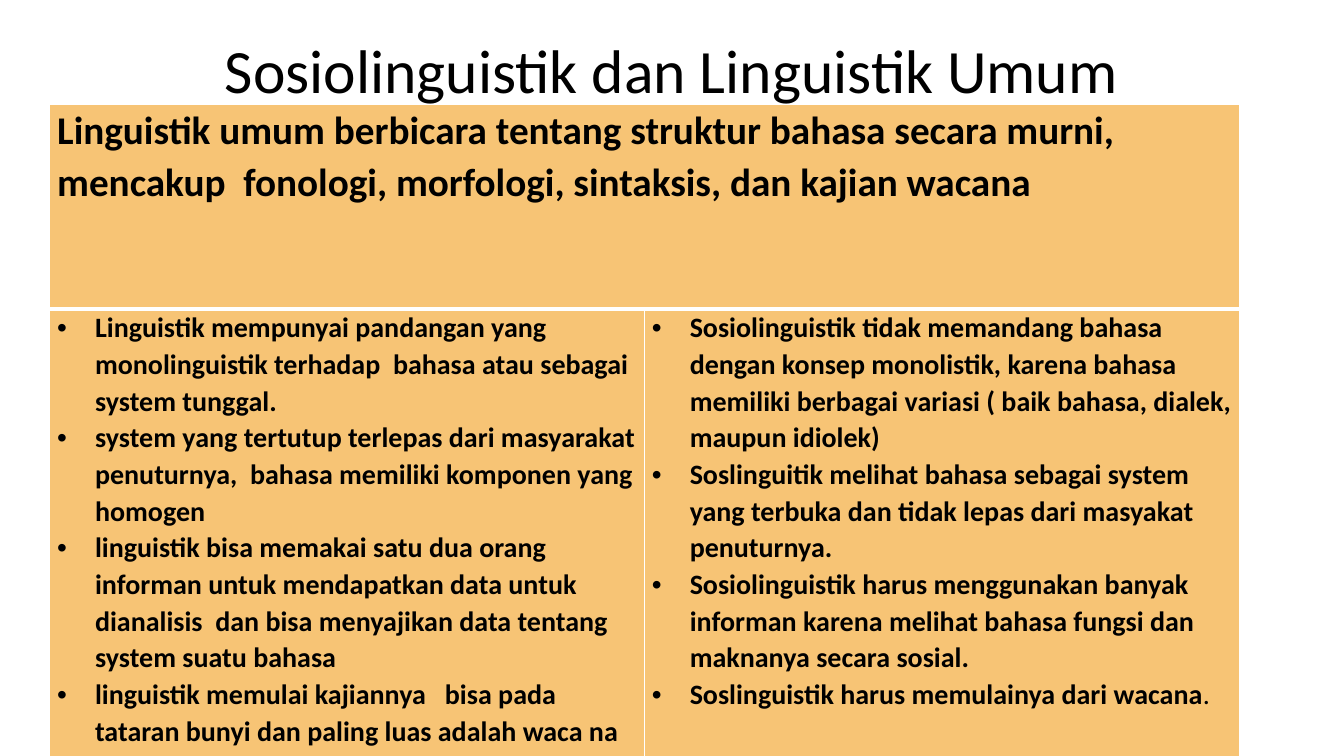
from lxml import etree
from pptx import Presentation
from pptx.dml.color import RGBColor
from pptx.enum import text
from pptx.oxml import ns
from pptx.util import Pt

FONT = "Calibri"
BLACK, WHITE, ORANGE = "000000", "FFFFFF", "F7C475"
INDENT = 27
TITLE = "Sosiolinguistik dan Linguistik Umum"
HEADING = ("Linguistik umum berbicara tentang struktur bahasa secara murni, "
           "mencakup  fonologi, morfologi, sintaksis, dan kajian wacana")
LINGUISTIK = [
    ["Linguistik mempunyai pandangan yang monolinguistik terhadap  bahasa "
     "atau sebagai system tunggal."],
    ["system yang tertutup terlepas dari masyarakat penuturnya,  bahasa "
     "memiliki komponen yang homogen"],
    ["linguistik bisa memakai satu dua orang informan untuk mendapatkan data "
     "untuk dianalisis  dan bisa menyajikan data tentang system suatu bahasa"],
    ["linguistik memulai kajiannya   bisa pada tataran bunyi dan paling luas "
     "adalah waca na"],
]
SOSIOLINGUISTIK = [
    ["Sosiolinguistik tidak memandang bahasa dengan konsep monolistik, karena "
     "bahasa memiliki berbagai variasi ( baik bahasa, dialek, maupun idiolek)"],
    ["Soslinguitik melihat bahasa sebagai system yang terbuka dan tidak lepas "
     "dari masyakat penuturnya."],
    ["Sosiolinguistik harus menggunakan banyak informan karena melihat bahasa "
     "fungsi dan maknanya secara sosial."],
    ["Soslinguistik harus memulainya dari wacana", "."],
]


def color(hex_value):
    return RGBColor.from_string(hex_value)


def add_run(p, content, size, bold=False):
    r = p.add_run()
    r.text = content
    r.font.name = FONT
    r.font.size = Pt(size)
    r.font.bold = bold
    r.font.color.rgb = color(BLACK)


def add_bullet(p):
    pPr = p._p.get_or_add_pPr()
    pPr.set("marL", str(Pt(INDENT)))
    pPr.set("indent", str(-Pt(INDENT)))
    etree.SubElement(pPr, ns.qn("a:buFont")).set("typeface", "Arial")
    etree.SubElement(pPr, ns.qn("a:buChar")).set("char", "•")


def set_borders(cell, bottom):
    tcPr = cell._tc.get_or_add_tcPr()
    widths = {"lnL": 1, "lnR": 1, "lnT": 1, "lnB": bottom}
    for i, (side, width) in enumerate(widths.items()):
        ln = etree.Element(ns.qn("a:" + side), w=str(Pt(width)))
        fill = etree.SubElement(ln, ns.qn("a:solidFill"))
        etree.SubElement(fill, ns.qn("a:srgbClr")).set("val", WHITE)
        tcPr.insert(i, ln)


def fill_cell(cell, paragraphs, size, bullets):
    tf = cell.text_frame
    for i, runs in enumerate(paragraphs):
        p = tf.add_paragraph() if i else tf.paragraphs[0]
        p.line_spacing = 1.07
        if bullets:
            add_bullet(p)
        for content in runs:
            add_run(p, content, size, content != ".")


def add_title(s, x, y, w, h):
    sp = s.shapes.title
    sp.left, sp.top, sp.width, sp.height = Pt(x), Pt(y), Pt(w), Pt(h)
    tf = sp.text_frame
    tf.word_wrap = True
    tf.vertical_anchor = text.MSO_ANCHOR.MIDDLE
    p = tf.paragraphs[0]
    p.alignment = text.PP_ALIGN.CENTER
    p.line_spacing = 0.9
    add_run(p, TITLE, 44)


def add_comparison(s, x, y, w, h, heading_h):
    frame = s.shapes.add_table(2, 2, Pt(x), Pt(y), Pt(w), Pt(h))
    table = frame.table
    table.first_row = table.horz_banding = False
    for row, height in zip(table.rows, (heading_h, h - heading_h)):
        row.height = Pt(height)
    for cell in table.iter_cells():
        cell.margin_left = cell.margin_right = Pt(5.4)
        cell.margin_top = cell.margin_bottom = 0
        cell.fill.solid()
        cell.fill.fore_color.rgb = color(ORANGE)
    for col in range(2):
        set_borders(table.cell(0, col), 3)
        set_borders(table.cell(1, col), 1)
    table.cell(0, 0).merge(table.cell(0, 1))
    fill_cell(table.cell(0, 0), [[HEADING]], 28, False)
    for col, points in enumerate((LINGUISTIK, SOSIOLINGUISTIK)):
        fill_cell(table.cell(1, col), points, 20, True)


def main():
    prs = Presentation()
    prs.slide_width, prs.slide_height = Pt(960), Pt(540)
    s = prs.slides.add_slide(prs.slide_layouts[5])
    add_title(s, 66, 0, 828, 104.4)
    add_comparison(s, 35.5, 74.5, 849.6, 475, 146)
    prs.save("out.pptx")


if __name__ == "__main__":
    main()
